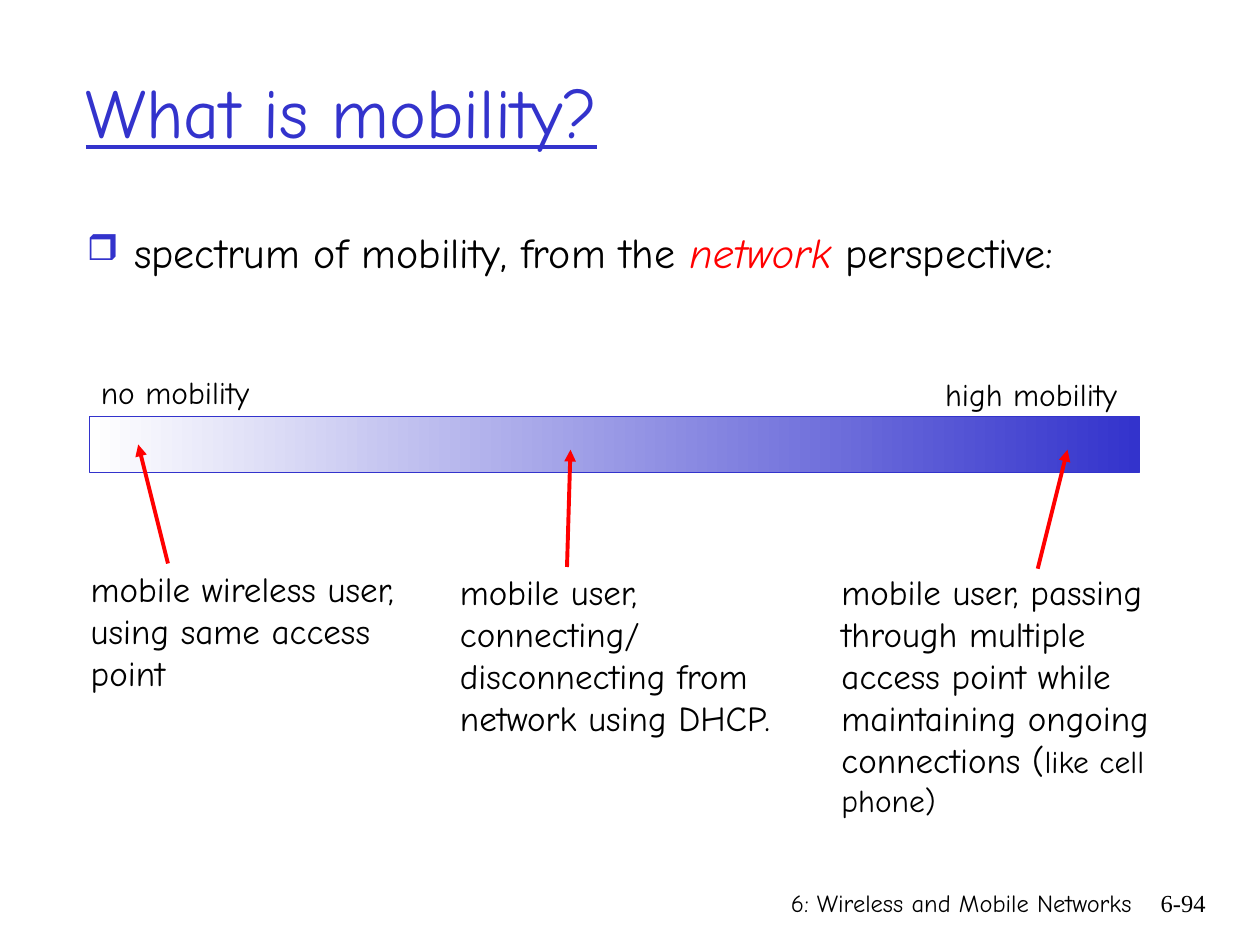
from dataclasses import dataclass

from lxml import etree
from pptx import Presentation
from pptx.dml.color import RGBColor
from pptx.enum.shapes import MSO_CONNECTOR, MSO_SHAPE
from pptx.enum.text import MSO_ANCHOR, MSO_AUTO_SIZE, PP_ALIGN
from pptx.oxml.ns import qn
from pptx.util import Pt

STRAIGHT = MSO_CONNECTOR.STRAIGHT
RECTANGLE = MSO_SHAPE.RECTANGLE
MIDDLE, TOP = MSO_ANCHOR.MIDDLE, MSO_ANCHOR.TOP
GROW = MSO_AUTO_SIZE.SHAPE_TO_FIT_TEXT
LEFT, RIGHT = PP_ALIGN.LEFT, PP_ALIGN.RIGHT


@dataclass(frozen=True)
class Theme:
    font: str = "Comic Neue"
    number_font: str = "Times New Roman"
    text: str = "000000"
    accent: str = "3333CC"
    highlight: str = "FF0000"
    background: str = "FFFFFF"
    title_size: int = 40
    body_size: int = 24
    caption_size: int = 20
    label_size: int = 18
    footer_size: int = 14


class SlideBuilder:
    def __init__(self, slide, theme):
        self.slide = slide
        self.theme = theme

    def text(self, box, lines, size, font=None, color=None, align=LEFT,
             anchor=TOP, wrap=True, grow=False):
        """Add a text box; each line is one paragraph. Returns the paragraphs."""
        shape = self.slide.shapes.add_textbox(*map(Pt, box))
        frame = shape.text_frame
        frame.text = "\n".join(lines)
        frame.word_wrap = wrap
        frame.vertical_anchor = anchor
        if grow:
            frame.auto_size = GROW
        for paragraph in frame.paragraphs:
            paragraph.alignment = align
            paragraph.font.name = font or self.theme.font
            paragraph.font.size = Pt(size)
            paragraph.font.color.rgb = RGBColor.from_string(color or self.theme.text)
        return frame.paragraphs

    def bullet(self, paragraph, character, indent):
        paragraph.space_before = Pt(4.8)
        properties = paragraph._p.get_or_add_pPr()
        properties.set("marL", str(Pt(indent)))
        properties.set("indent", str(-Pt(indent)))
        # Bullet elements go before the default run properties
        defaults = properties.find(qn("a:defRPr"))
        color = etree.Element(qn("a:buClr"))
        etree.SubElement(color, qn("a:srgbClr"), val=self.theme.accent)
        size = etree.Element(qn("a:buSzPct"), val="85000")
        symbol = etree.Element(qn("a:buChar"), char=character)
        for element in (color, size, symbol):
            defaults.addprevious(element)

    def gradient_bar(self, box):
        shape = self.slide.shapes.add_shape(RECTANGLE, *map(Pt, box))
        shape.shadow.inherit = False
        shape.fill.gradient()
        shape.fill.gradient_angle = 0
        colors = (self.theme.background, self.theme.accent)
        for stop, position, color in zip(shape.fill.gradient_stops, (0, 1), colors):
            stop.position = position
            stop.color.rgb = RGBColor.from_string(color)
        shape.line.color.rgb = RGBColor.from_string(self.theme.accent)
        shape.line.width = Pt(0.75)

    def arrow(self, start, end):
        connector = self.slide.shapes.add_connector(STRAIGHT, *map(Pt, start + end))
        connector.line.color.rgb = RGBColor.from_string(self.theme.highlight)
        connector.line.width = Pt(2.25)
        line = connector.line._get_or_add_ln()
        etree.SubElement(line, qn("a:tailEnd"), type="triangle")
        etree.SubElement(connector._element.spPr, qn("a:effectLst"))


def main():
    presentation = Presentation()
    presentation.slide_width, presentation.slide_height = Pt(720), Pt(540)
    theme = Theme()
    slide = presentation.slides.add_slide(presentation.slide_layouts[6])
    builder = SlideBuilder(slide, theme)

    # Footer
    builder.text((350, 504, 304, 36), ["6: Wireless and Mobile Networks"],
                 theme.footer_size, align=RIGHT)
    builder.text((643, 504, 53, 36), ["6-94"], theme.footer_size,
                 font=theme.number_font, align=RIGHT)

    # Title
    title = builder.text((42, 18, 612, 90), ["What is mobility?"], theme.title_size,
                         color=theme.accent, anchor=MIDDLE)[0]
    title.font.underline = True

    # Bullet with one highlighted word
    statement = builder.text((42.5, 126, 646, 45),
                             ["spectrum of mobility, from the "], theme.body_size)[0]
    emphasis = statement.add_run()
    emphasis.text = "network"
    emphasis.font.italic = True
    emphasis.font.color.rgb = RGBColor.from_string(theme.highlight)
    statement.add_run().text = " perspective:"
    builder.bullet(statement, "❒", 27)

    # Mobility spectrum
    builder.gradient_bar((51, 238, 600, 32))
    for box, label in (((50.5, 209.5, 106, 29), "no mobility"),
                       ((533, 210.5, 122, 29), "high mobility")):
        builder.text(box, [label], theme.label_size, wrap=False, grow=True)

    # Captions
    builder.text((44.75, 321, 214.5, 79),
                 ["mobile wireless user,", "using same access", "point"],
                 theme.caption_size, wrap=False, grow=True)
    high = builder.text((473.75, 322.5, 212, 149),
                        ["mobile user, passing through multiple access point "
                         "while maintaining ongoing connections ("],
                        theme.caption_size, grow=True)[0]
    remark = high.add_run()
    remark.text = "like cell phone)"
    remark.font.size = Pt(theme.label_size)
    builder.text((255.75, 322.5, 191.5, 127),
                 ["mobile user, connecting/ disconnecting from network using DHCP."],
                 theme.caption_size, grow=True)

    # Arrows from the captions into the spectrum
    for start, end in (((96, 322), (79, 254)),
                       ((593, 325), (610, 257)),
                       ((324, 324), (326, 257))):
        builder.arrow(start, end)

    presentation.save("out.pptx")


if __name__ == "__main__":
    main()
